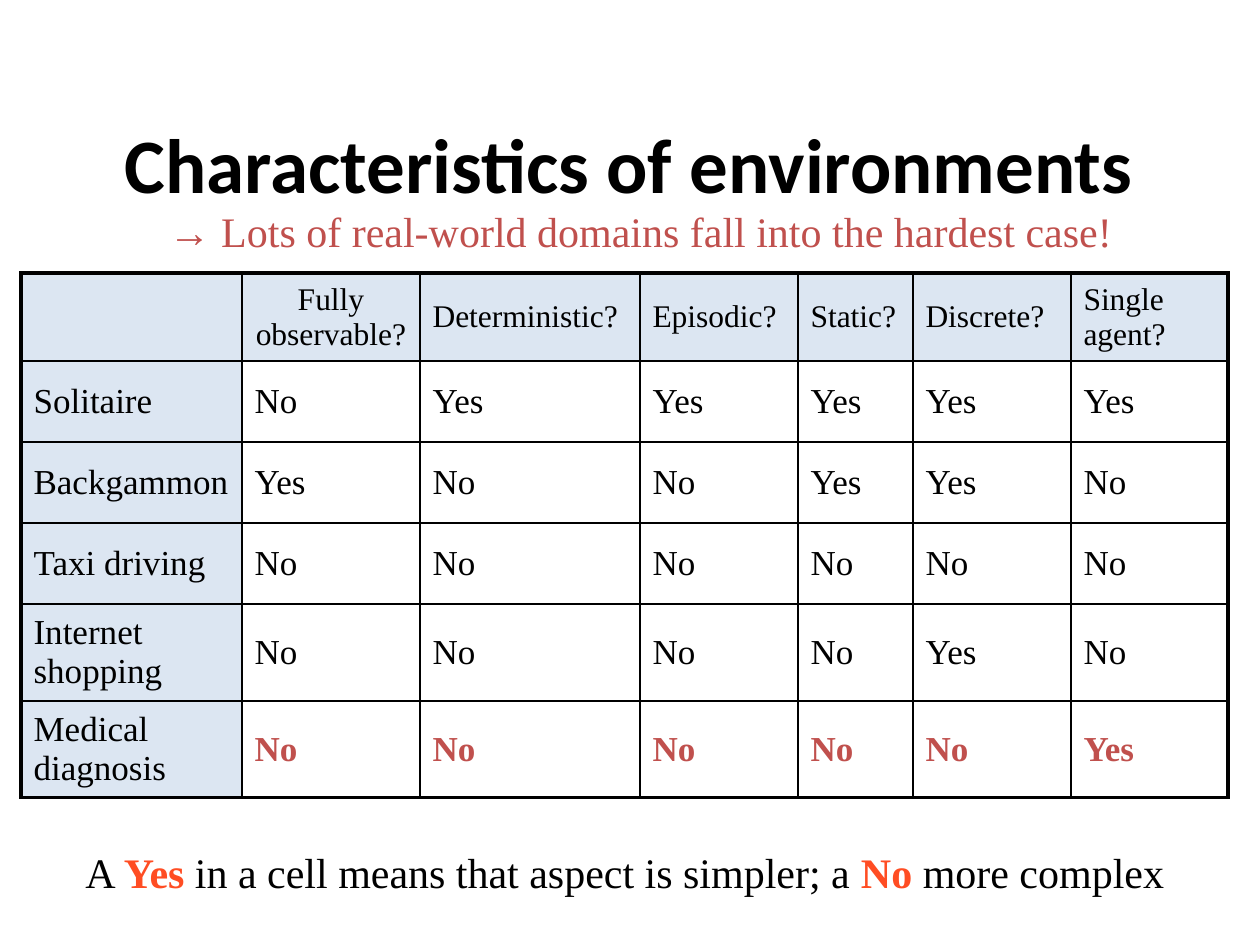
from lxml import etree
from pptx import Presentation
from pptx.dml.color import RGBColor
from pptx.enum.text import MSO_ANCHOR, PP_ALIGN
from pptx.oxml.ns import qn
from pptx.util import Pt

CENTER, LEFT = PP_ALIGN.CENTER, PP_ALIGN.LEFT
MIDDLE, TOP = MSO_ANCHOR.MIDDLE, MSO_ANCHOR.TOP
BLACK = RGBColor(0x00, 0x00, 0x00)
HEADER_BLUE = RGBColor(0xDC, 0xE6, 0xF2)
BRICK = RGBColor(0xC0, 0x50, 0x4D)
ORANGE = RGBColor(0xFF, 0x4D, 0x23)
SERIF, SANS = "Times New Roman", "Calibri"
THIN, THICK = Pt(1), Pt(2.25)

TITLE = "Characteristics of environments"
SUBTITLE = "→ Lots of real-world domains fall into the hardest case!"
LEGEND = [
    ("A ", False), ("Yes", True),
    (" in a cell means that aspect is simpler; a ", False),
    ("No", True), (" more complex", False),
]
ROWS = [
    ["", "Fully observable?", "Deterministic?", "Episodic?", "Static?", "Discrete?", "Single agent?"],
    ["Solitaire", "No", "Yes", "Yes", "Yes", "Yes", "Yes"],
    ["Backgammon", "Yes", "No", "No", "Yes", "Yes", "No"],
    ["Taxi driving", "No", "No", "No", "No", "No", "No"],
    ["Internet shopping", "No", "No", "No", "No", "Yes", "No"],
    ["Medical diagnosis", "No", "No", "No", "No", "No", "Yes"],
]
COL_WIDTHS = [221, 178, 220, 158, 115, 158, 157]
ROW_HEIGHTS = [88, 81, 81, 81, 96, 97]


def px(n):
    return round(n * 914400 / 126)


def style(p, size, name, color, bold=False):
    p.font.size, p.font.name, p.font.bold = Pt(size), name, bold
    p.font.color.rgb = color


def add_text(s, box, runs, size, name, color, align=CENTER, bold=False, anchor=TOP, wrap=True):
    tf = s.shapes.add_textbox(*map(px, box)).text_frame
    tf.word_wrap, tf.vertical_anchor = wrap, anchor
    p = tf.paragraphs[0]
    p.alignment = align
    style(p, size, name, color, bold)
    for text, accent in runs:
        r = p.add_run()
        r.text = text
        if accent:
            r.font.bold, r.font.color.rgb = True, ORANGE


def set_borders(cell, widths):
    tc_pr = cell._tc.get_or_add_tcPr()
    for i, (side, width) in enumerate(widths.items()):
        ln = etree.Element(qn(f"a:{side}"), w=str(width))
        fill = etree.SubElement(ln, qn("a:solidFill"))
        etree.SubElement(fill, qn("a:srgbClr"), val=str(BLACK))
        tc_pr.insert(i, ln)


def add_grid(s):
    last_row, last_col = len(ROWS) - 1, len(COL_WIDTHS) - 1
    size = (sum(COL_WIDTHS), sum(ROW_HEIGHTS))
    table = s.shapes.add_table(len(ROWS), len(COL_WIDTHS), *map(px, (21, 273, *size))).table
    for col, width in zip(table.columns, COL_WIDTHS):
        col.width = px(width)
    for row, height in zip(table.rows, ROW_HEIGHTS):
        row.height = px(height)
    for i, values in enumerate(ROWS):
        for j, text in enumerate(values):
            cell = table.cell(i, j)
            cell.text, cell.vertical_anchor = text, MIDDLE
            if i == 0 or j == 0:
                cell.fill.solid()
                cell.fill.fore_color.rgb = HEADER_BLUE
            else:
                cell.fill.background()
            hardest = i == last_row and j > 0
            p = cell.text_frame.paragraphs[0]
            p.alignment = CENTER if (i, j) == (0, 1) else LEFT
            style(p, 20 if i else 18, SERIF, BRICK if hardest else BLACK, hardest)
            set_borders(cell, {
                "lnL": THIN if j else THICK,
                "lnR": THICK if j == last_col else THIN,
                "lnT": THIN if i else THICK,
                "lnB": THICK if i == last_row else THIN,
            })


def main():
    """Build the slide that compares task environments."""
    prs = Presentation()
    prs.slide_width, prs.slide_height = px(1260), px(945)
    s = prs.slides.add_slide(prs.slide_layouts[6])
    add_text(s, (94, 84, 1071, 158), [(TITLE, False)], 44, SANS, BLACK, bold=True, anchor=MIDDLE)
    add_grid(s)
    add_text(s, (147, 199, 987, 63), [(SUBTITLE, False)], 24, SERIF, BRICK)
    add_text(s, (73, 840, 1137, 64), LEGEND, 24, SERIF, BLACK, align=LEFT, wrap=False)
    prs.save("out.pptx")


if __name__ == "__main__":
    main()
